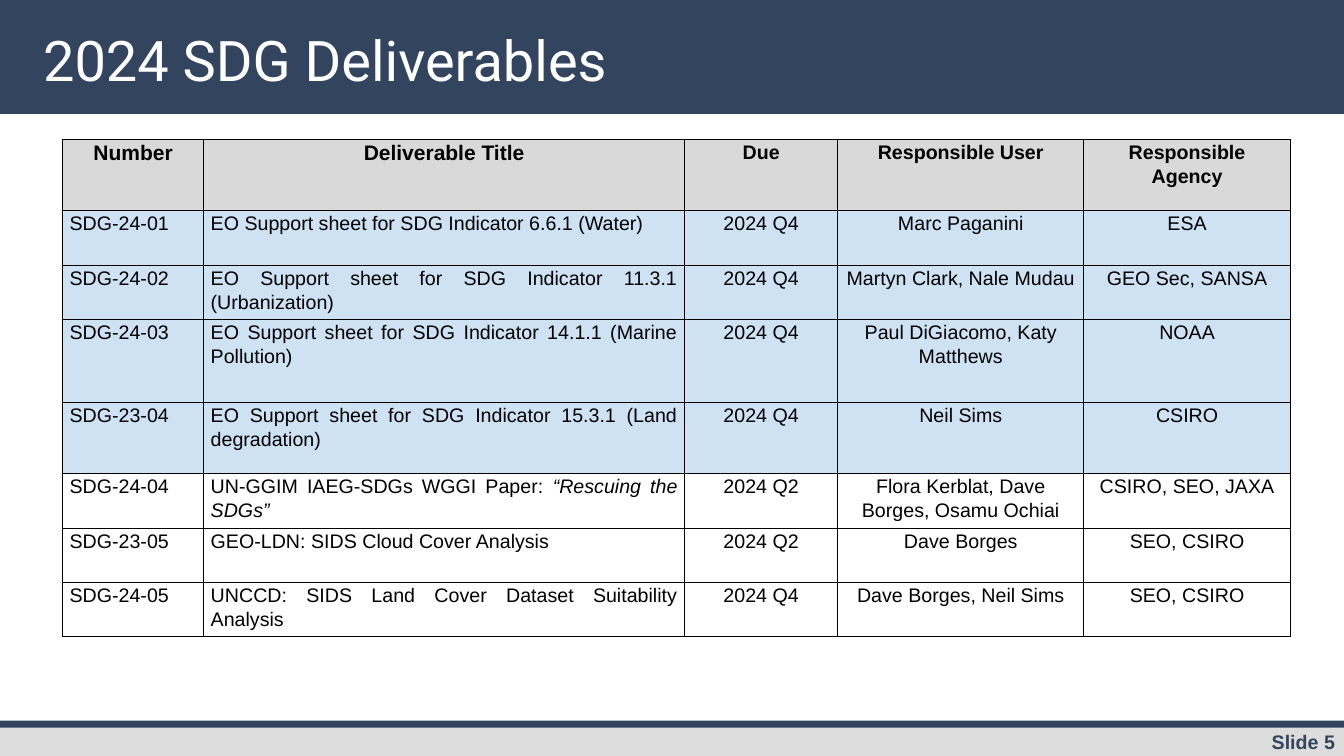
from pptx import Presentation
from pptx.dml.color import RGBColor
from pptx.enum.shapes import MSO_SHAPE
from pptx.enum.text import MSO_ANCHOR, PP_ALIGN
from pptx.oxml import parse_xml
from pptx.oxml.ns import nsdecls
from pptx.util import Inches, Pt

RECTANGLE = MSO_SHAPE.RECTANGLE
TOP, MIDDLE = MSO_ANCHOR.TOP, MSO_ANCHOR.MIDDLE
LEFT, CENTER, RIGHT, JUSTIFY = PP_ALIGN.LEFT, PP_ALIGN.CENTER, PP_ALIGN.RIGHT, PP_ALIGN.JUSTIFY

NAVY = RGBColor(0x33, 0x44, 0x5F)
FOOTER_GREY = RGBColor(0xDD, 0xDD, 0xDD)
HEADER_GREY = RGBColor(0xD9, 0xD9, 0xD9)
LIGHT_BLUE = RGBColor(0xCF, 0xE2, 0xF3)
WHITE = RGBColor(0xFF, 0xFF, 0xFF)
BLACK = RGBColor(0, 0, 0)

# Content
TITLE = "2024 SDG Deliverables"
SLIDE_LABEL = "Slide 5"
HEADERS = ["Number", "Deliverable Title", "Due", "Responsible User", "Responsible Agency"]
SUPPORT_SHEETS = [
    ("SDG-24-01", "EO Support sheet for SDG Indicator 6.6.1 (Water)", "2024 Q4",
     "Marc Paganini", "ESA"),
    ("SDG-24-02", "EO Support sheet for SDG Indicator 11.3.1 (Urbanization)", "2024 Q4",
     "Martyn Clark, Nale Mudau", "GEO Sec, SANSA"),
    ("SDG-24-03", "EO Support sheet for SDG Indicator 14.1.1 (Marine Pollution)", "2024 Q4",
     "Paul DiGiacomo, Katy Matthews", "NOAA"),
    ("SDG-23-04", "EO Support sheet for SDG Indicator 15.3.1 (Land degradation)", "2024 Q4",
     "Neil Sims", "CSIRO"),
]
OTHER_DELIVERABLES = [
    ("SDG-24-04", "UN-GGIM IAEG-SDGs WGGI Paper: “Rescuing the SDGs”", "2024 Q2",
     "Flora Kerblat, Dave Borges, Osamu Ochiai", "CSIRO, SEO, JAXA"),
    ("SDG-23-05", "GEO-LDN: SIDS Cloud Cover Analysis", "2024 Q2",
     "Dave Borges", "SEO, CSIRO"),
    ("SDG-24-05", "UNCCD: SIDS Land Cover Dataset Suitability Analysis", "2024 Q4",
     "Dave Borges, Neil Sims", "SEO, CSIRO"),
]

# Layout, in inches
PAGE_WIDTH, PAGE_HEIGHT = 13.33, 7.5
BANDS = [  # top, height, colour
    (0, 1.13, NAVY),
    (7.19, 0.31, FOOTER_GREY),
    (7.15, 0.07, NAVY),
]
TABLE_LEFT, TABLE_TOP = 0.62, 1.38
COLUMN_WIDTHS = [1.4, 4.77, 1.52, 2.44, 2.05]
ROW_HEIGHTS = [0.71, 0.54, 0.54, 0.82, 0.71, 0.54, 0.54, 0.54]
CELL_MARGIN = 0.07


def style(span, size, color, bold=False, name="Arial"):
    span.font.name = name
    span.font.size = Pt(size)
    span.font.bold = bold
    span.font.color.rgb = color


def add_label(page, text, place, anchor, align):
    box = page.shapes.add_textbox(*map(Inches, place))
    frame = box.text_frame
    frame.word_wrap = True
    frame.vertical_anchor = anchor
    frame.text = text
    para = frame.paragraphs[0]
    para.alignment = align
    return para


def add_borders(cell):
    properties = cell._tc.get_or_add_tcPr()
    for position, side in enumerate(("lnL", "lnR", "lnT", "lnB")):
        properties.insert(position, parse_xml(
            f'<a:{side} {nsdecls("a")} w="{Pt(0.75)}"><a:solidFill>'
            f'<a:srgbClr val="{BLACK}"/></a:solidFill></a:{side}>'))


def fill_cell(cell, text, fill, align, size, bold):
    cell.margin_left = cell.margin_right = Inches(CELL_MARGIN)
    cell.margin_top = cell.margin_bottom = 0
    cell.vertical_anchor = TOP
    if fill is None:
        cell.fill.background()
    else:
        cell.fill.solid()
        cell.fill.fore_color.rgb = fill
    add_borders(cell)
    para = cell.text_frame.paragraphs[0]
    para.alignment = align
    para.line_spacing = 1.1
    # A quoted paper title is set in italics
    plain, quote, quoted = text.partition("“")
    for part, italic in ((plain, False), (quote + quoted, True)):
        if part:
            span = para.add_run()
            span.text = part
            style(span, size, BLACK, bold)
            span.font.italic = italic


def add_deliverables(page):
    rows = [(HEADERS, HEADER_GREY)]
    rows += [(row, LIGHT_BLUE) for row in SUPPORT_SHEETS]
    rows += [(row, None) for row in OTHER_DELIVERABLES]
    table = page.shapes.add_table(
        len(rows), len(HEADERS), Inches(TABLE_LEFT), Inches(TABLE_TOP),
        Inches(sum(COLUMN_WIDTHS)), Inches(sum(ROW_HEIGHTS))).table
    table.first_row = table.horz_banding = False
    for column, width in zip(table.columns, COLUMN_WIDTHS):
        column.width = Inches(width)
    for row, height in zip(table.rows, ROW_HEIGHTS):
        row.height = Inches(height)
    for row_index, (texts, fill) in enumerate(rows):
        header = row_index == 0
        number_align = LEFT if fill is None else JUSTIFY
        aligns = [CENTER] * 5 if header else [number_align, JUSTIFY, CENTER, CENTER, CENTER]
        for column_index, text in enumerate(texts):
            size = 15 if header and column_index < 2 else 14
            fill_cell(table.cell(row_index, column_index), text, fill,
                      aligns[column_index], size, header)


def main():
    deck = Presentation()
    deck.slide_width, deck.slide_height = Inches(PAGE_WIDTH), Inches(PAGE_HEIGHT)
    page = deck.slides.add_slide(deck.slide_layouts[6])

    # Header and footer bands
    for top, height, color in BANDS:
        band = page.shapes.add_shape(
            RECTANGLE, 0, Inches(top), Inches(PAGE_WIDTH), Inches(height))
        band.shadow.inherit = False
        band.fill.solid()
        band.fill.fore_color.rgb = color
        band.line.fill.background()

    # Slide number and title
    para = add_label(page, SLIDE_LABEL, (11.23, 7.19, 2.11, 0.34), TOP, RIGHT)
    style(para.runs[0], 14, NAVY, bold=True)
    para = add_label(page, TITLE, (0.33, 0.26, 9.74, 0.73), MIDDLE, LEFT)
    para.line_spacing = 0.9
    style(para.runs[0], 40, WHITE, name="Roboto")

    # Deliverables table
    add_deliverables(page)
    deck.save("out.pptx")


if __name__ == "__main__":
    main()
